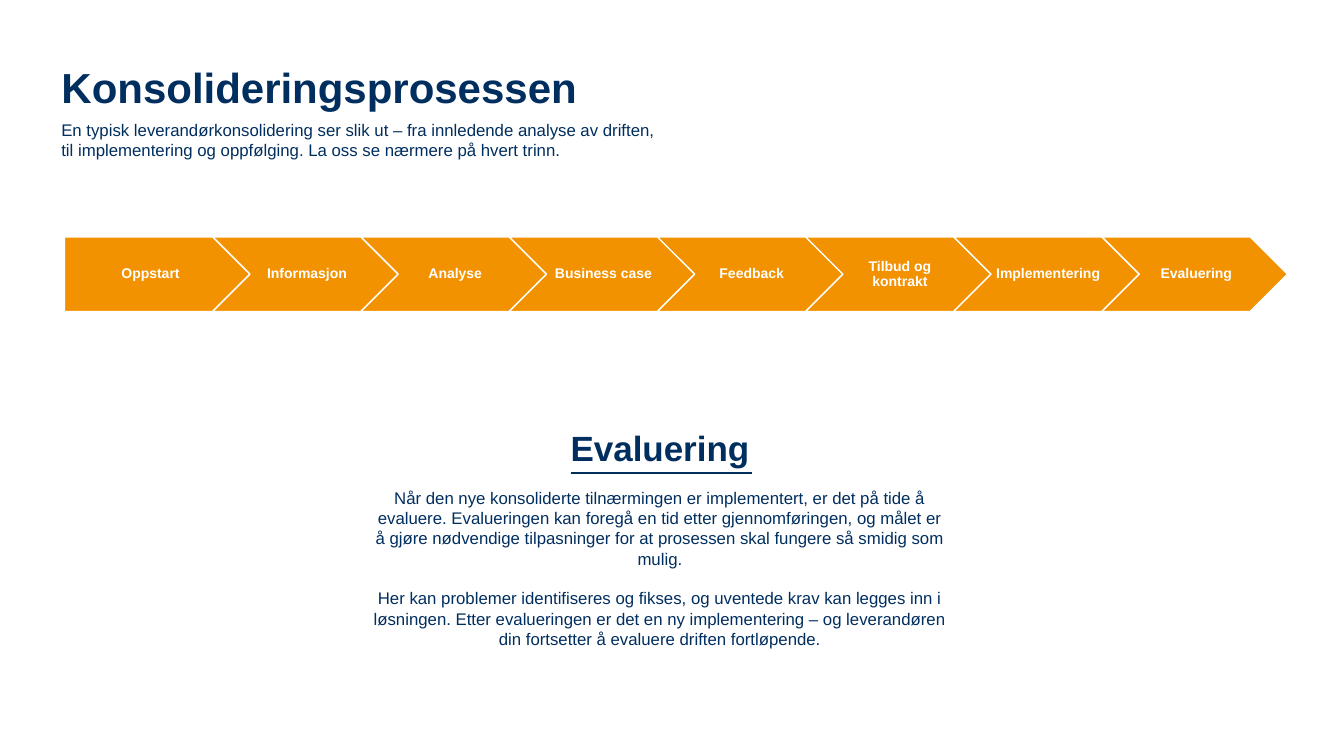
from dataclasses import dataclass

from lxml import etree
from pptx import Presentation
from pptx.dml.color import RGBColor
from pptx.enum.shapes import MSO_CONNECTOR, MSO_SHAPE
from pptx.enum.text import MSO_ANCHOR, PP_ALIGN
from pptx.oxml.ns import qn
from pptx.util import Emu, Pt

EMU_PER_PX = 9144
CHEVRON, PENTAGON = MSO_SHAPE.CHEVRON, MSO_SHAPE.PENTAGON
STRAIGHT = MSO_CONNECTOR.STRAIGHT
TOP, MIDDLE = MSO_ANCHOR.TOP, MSO_ANCHOR.MIDDLE
LEFT, CENTER = PP_ALIGN.LEFT, PP_ALIGN.CENTER
FONT = "Arial"
NAVY, ORANGE, WHITE = "002E5F", "F39200", "FFFFFF"

STEP_LEFT, STEP_TOP, STEP_PITCH = 64, 235, 147
STEP_WIDTH, STEP_HEIGHT = 184, 74


@dataclass(frozen=True)
class Step:
    label: str
    preset: MSO_SHAPE = CHEVRON
    left_inset: int = 4


STEPS = [
    Step("Oppstart", PENTAGON, 6),
    Step("Informasjon"),
    Step("Analyse"),
    Step("Business case"),
    Step("Feedback"),
    Step("Tilbud og kontrakt"),
    Step("Implementering"),
    Step("Evaluering"),
]

INTRODUCTION = (
    "En typisk leverandørkonsolidering ser slik ut – fra innledende analyse av driften,\n"
    "til implementering og oppfølging. La oss se nærmere på hvert trinn."
)
EVALUATION = [
    "Når den nye konsoliderte tilnærmingen er implementert, er det på tide å evaluere. "
    "Evalueringen kan foregå en tid etter gjennomføringen, og målet er å gjøre nødvendige "
    "tilpasninger for at prosessen skal fungere så smidig som mulig.",
    "Her kan problemer identifiseres og fikses, og uventede krav kan legges inn i løsningen. "
    "Etter evalueringen er det en ny implementering – og leverandøren din fortsetter å "
    "evaluere driften fortløpende.",
]


def px(length: int) -> Emu:
    return Emu(length * EMU_PER_PX)


def color(value: str) -> RGBColor:
    return RGBColor.from_string(value)


def write(paragraph, text: str, *, size: int = 12, fill: str = NAVY, bold: bool = False,
          align: PP_ALIGN = LEFT, before: float = 0, spacing: float = 1.0) -> None:
    paragraph.text = text
    paragraph.alignment = align
    paragraph.space_before = Pt(before)
    paragraph.line_spacing = spacing
    for font in [paragraph.font, *(run.font for run in paragraph.runs)]:
        font.name = FONT
        font.size = Pt(size)
        font.bold = bold
        font.color.rgb = color(fill)


def add_text_frame(slide, left: int, top: int, width: int, height: int):
    text_box = slide.shapes.add_textbox(px(left), px(top), px(width), px(height))
    text_box.text_frame.word_wrap = True
    return text_box.text_frame


def add_step(group, index: int, step: Step) -> None:
    shape = group.shapes.add_shape(step.preset, px(STEP_LEFT + index * STEP_PITCH), px(STEP_TOP),
                                   px(STEP_WIDTH), px(STEP_HEIGHT))
    shape.shadow.inherit = False
    shape.fill.solid()
    shape.fill.fore_color.rgb = color(ORANGE)
    shape.line.color.rgb = color(WHITE)
    shape.line.width = Pt(1)
    frame = shape.text_frame
    frame.word_wrap = True
    frame.vertical_anchor = MIDDLE
    frame.margin_left, frame.margin_right = px(step.left_inset), px(1)
    frame.margin_top = frame.margin_bottom = px(3)
    write(frame.paragraphs[0], step.label, size=10, fill=WHITE, bold=True,
          align=CENTER, spacing=0.9)


def add_title(slide) -> None:
    title = slide.shapes.title
    title.left, title.top, title.width, title.height = px(51), px(56), px(1176), px(78)
    title.text_frame.vertical_anchor = TOP
    write(title.text_frame.paragraphs[0], "Konsolideringsprosessen", size=30, bold=True)


def add_evaluation(slide) -> None:
    frame = add_text_frame(slide, 359, 418, 591, 234)
    write(frame.paragraphs[0], "Evaluering", size=25, bold=True, align=CENTER)
    for text in EVALUATION:
        write(frame.add_paragraph(), text, align=CENTER, before=14)
    underline = slide.shapes.add_connector(STRAIGHT, px(566), px(469), px(746), px(469))
    underline.line.color.rgb = color(NAVY)
    underline.line.width = Pt(1.25)
    etree.SubElement(underline._element.spPr, qn("a:effectLst"))


def main() -> None:
    presentation = Presentation()
    presentation.slide_width, presentation.slide_height = px(1333), px(750)
    slide = presentation.slides.add_slide(presentation.slide_layouts[5])
    group = slide.shapes.add_group_shape()
    for index, step in enumerate(STEPS):
        add_step(group, index, step)
    add_title(slide)
    introduction = add_text_frame(slide, 51, 114, 1226, 50)
    write(introduction.paragraphs[0], INTRODUCTION)
    add_evaluation(slide)
    presentation.save("out.pptx")


if __name__ == "__main__":
    main()
